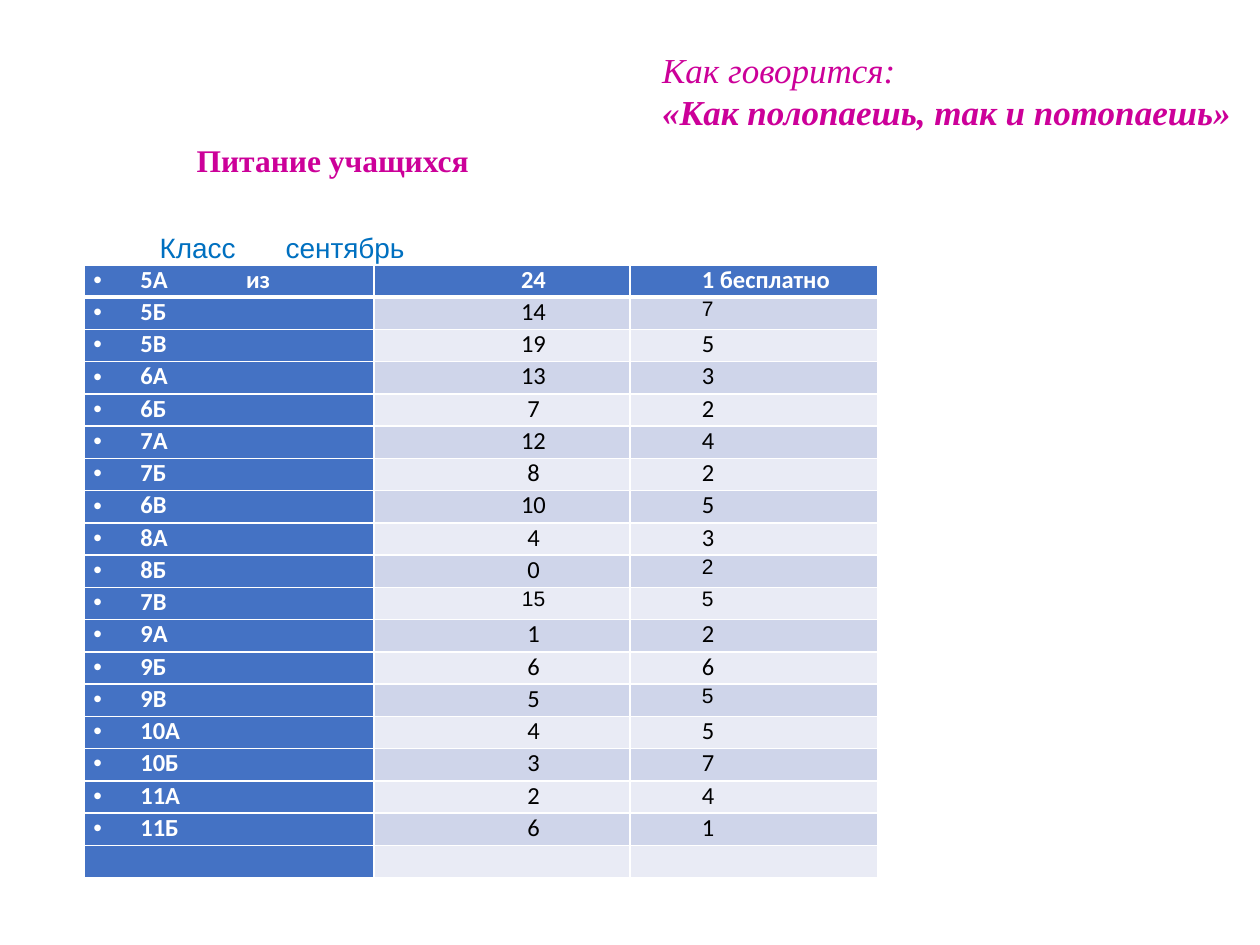
from lxml import etree
from pptx import Presentation
from pptx.dml.color import RGBColor
from pptx.enum.text import MSO_ANCHOR, MSO_AUTO_SIZE, PP_ALIGN
from pptx.oxml.ns import qn
from pptx.util import Cm, Pt

LEFT, CENTER = PP_ALIGN.LEFT, PP_ALIGN.CENTER
TOP, MIDDLE = MSO_ANCHOR.TOP, MSO_ANCHOR.MIDDLE
NO_AUTOFIT = MSO_AUTO_SIZE.NONE

WHITE = RGBColor(0xFF, 0xFF, 0xFF)
BLACK = RGBColor(0x00, 0x00, 0x00)
MAGENTA = RGBColor(0xCC, 0x00, 0x99)
LABEL_BLUE = RGBColor(0x00, 0x70, 0xC0)
HEADER_BLUE = RGBColor(0x44, 0x72, 0xC4)
BAND_DARK = RGBColor(0xCF, 0xD5, 0xEA)
BAND_LIGHT = RGBColor(0xE9, 0xEB, 0xF5)

MEALS = [
    ("5А\tиз", "24", "1 бесплатно"),
    ("5Б", "14", "7"),
    ("5В", "19", "5"),
    ("6А", "13", "3"),
    ("6Б", "7", "2"),
    ("7А", "12", "4"),
    ("7Б", "8", "2"),
    ("6В", "10", "5"),
    ("8А", "4", "3"),
    ("8Б", "0", "2"),
    ("7В", "15", "5"),
    ("9А", "1", "2"),
    ("9Б", "6", "6"),
    ("9В", "5", "5"),
    ("10А", "4", "5"),
    ("10Б", "3", "7"),
    ("11А", "2", "4"),
    ("11Б", "6", "1"),
    ("", "", ""),
]
ARIAL_CELLS = {(1, 2), (9, 2), (10, 1), (10, 2), (13, 2)}


def style_run(run, size, name, color, bold=False, italic=False):
    font = run.font
    font.size, font.name = Pt(size), name
    font.color.rgb = color
    font.bold, font.italic = bold, italic


def set_indent(paragraph, margin, first_line, bullet=None, tab=None):
    """Set margin and first-line indent, with an optional bullet and tab stop."""
    props = paragraph._p.get_or_add_pPr()
    props.set("marL", str(margin))
    props.set("indent", str(first_line))
    if bullet:
        etree.SubElement(props, qn("a:buFont"), typeface="Arial")
        etree.SubElement(props, qn("a:buChar"), char=bullet)
    if tab:
        stops = etree.SubElement(props, qn("a:tabLst"))
        etree.SubElement(stops, qn("a:tab"), pos=str(tab), algn="l")


prs = Presentation()
prs.slide_width, prs.slide_height = Cm(25.4), Cm(19.05)
slide = prs.slides.add_slide(prs.slide_layouts[5])

# Heading
heading = slide.shapes.title
heading.left, heading.top = Cm(3.71), Cm(2.8)
heading.width, heading.height = Cm(18.8), Cm(14.6)
heading.fill.solid()
heading.fill.fore_color.rgb = WHITE
frame = heading.text_frame
frame.text = "Питание учащихся"
frame.auto_size = NO_AUTOFIT
frame.vertical_anchor = TOP
frame.paragraphs[0].alignment = LEFT
frame.paragraphs[0].line_spacing = 0.9
style_run(frame.paragraphs[0].runs[0], 18, "Times New Roman", MAGENTA, bold=True)

# Saying
saying = slide.shapes.add_textbox(Cm(13.1), Cm(0.85), Cm(13.2), Cm(1.95))
frame = saying.text_frame
frame.word_wrap = True
frame.text = "Как говорится:\n«Как полопаешь, так и потопаешь»"
for paragraph, bold in zip(frame.paragraphs, (False, True)):
    style_run(paragraph.runs[0], 20, "Times New Roman", MAGENTA, bold, italic=True)

# Meals by class
table = slide.shapes.add_table(
    len(MEALS), 3, Cm(1.7), Cm(5.34), Cm(16), Cm(0.65 * len(MEALS))
).table
table.first_col = True
for column, width in zip(table.columns, (5.84, 5.16, 5)):
    column.width = Cm(width)

for row, values in enumerate(MEALS):
    table.rows[row].height = Cm(0.65)
    for col, value in enumerate(values):
        cell = table.cell(row, col)
        cell.margin_left = cell.margin_right = Cm(0.18)
        cell.margin_top = cell.margin_bottom = 0
        cell_props = cell._tc.get_or_add_tcPr()
        for side in ("lnL", "lnR", "lnT", "lnB"):
            under_header = (row, side) in ((0, "lnB"), (1, "lnT"))
            line = etree.SubElement(
                cell_props, qn(f"a:{side}"), w=str(Pt(3 if under_header else 1))
            )
            line_fill = etree.SubElement(line, qn("a:solidFill"))
            etree.SubElement(line_fill, qn("a:srgbClr"), val=str(WHITE))

        is_header = row == 0 or col == 0
        cell.fill.solid()
        cell.fill.fore_color.rgb = (
            HEADER_BLUE if is_header else BAND_DARK if row % 2 else BAND_LIGHT
        )
        paragraph = cell.text_frame.paragraphs[0]
        if not value:
            etree.SubElement(paragraph._p, qn("a:endParaRPr"), sz="1400")
            continue

        paragraph.text = value
        paragraph.alignment = CENTER if col == 1 else LEFT
        if col == 0:
            tab = Cm(3.08) if "\t" in value else None
            set_indent(paragraph, Cm(0.95), -Cm(0.95), "•", tab)
        else:
            set_indent(paragraph, 0, Cm(1.27))
        size, name = (12, "Arial") if (row, col) in ARIAL_CELLS else (14, "Calibri")
        style_run(
            paragraph.runs[0], size, name, WHITE if is_header else BLACK, is_header
        )

# Column labels
labels = slide.shapes.add_textbox(Cm(1.7), Cm(4.52), Cm(18), Cm(0.94))
frame = labels.text_frame
frame.word_wrap = True
frame.vertical_anchor = MIDDLE
frame.text = "Класс\tсентябрь"
set_indent(frame.paragraphs[0], 0, Cm(1.27), tab=Cm(9.35))
style_run(frame.paragraphs[0].runs[0], 16, "Arial", LABEL_BLUE)

prs.save("out.pptx")
